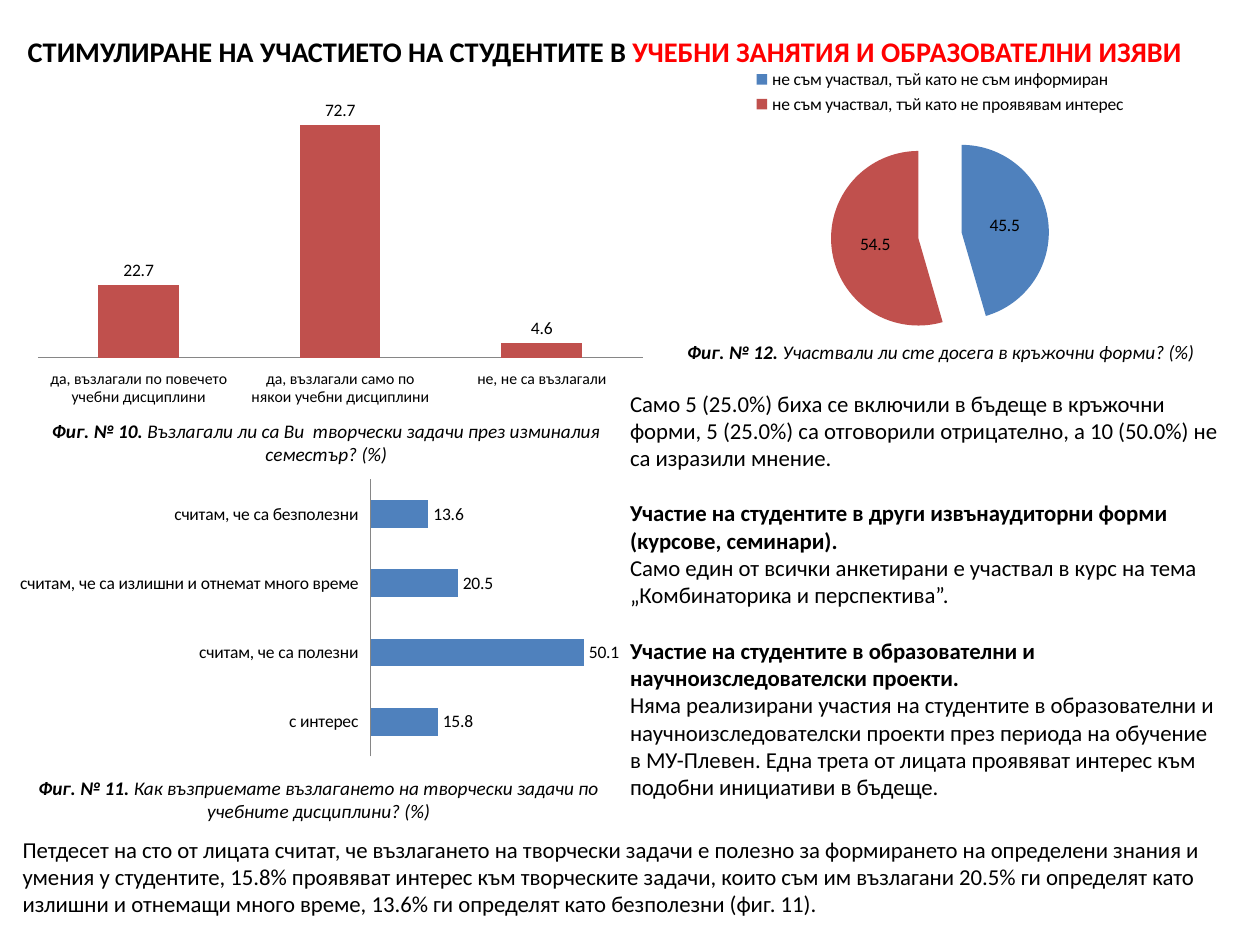
from lxml.etree import SubElement
from pptx import Presentation
from pptx.chart.data import CategoryChartData
from pptx.dml.color import RGBColor
from pptx.enum.chart import XL_CHART_TYPE, XL_LABEL_POSITION, XL_LEGEND_POSITION, XL_TICK_LABEL_POSITION, XL_TICK_MARK
from pptx.enum.text import MSO_ANCHOR, MSO_AUTO_SIZE, PP_ALIGN
from pptx.oxml import parse_xml
from pptx.oxml.ns import nsdecls, qn
from pptx.util import Pt

THEME = {
    "font": "Calibri", "black": "000000", "red": "FF0000", "axis": "868686",
    "blue": "4F81BD", "brick": "C0504D",
    "title": 16.2, "body": 13, "caption": 11, "label": 10, "small": 9, "gap": 15.9,
}

TITLE = {
    "box": (8.64, 9.36, 697.7, 39.6),
    "runs": [("СТИМУЛИРАНЕ НА УЧАСТИЕТО НА СТУДЕНТИТЕ В ", "black"),
             ("УЧЕБНИ ЗАНЯТИЯ И ОБРАЗОВАТЕЛНИ ИЗЯВИ", "red")],
}

BAR_CHARTS = [
    {"kind": XL_CHART_TYPE.COLUMN_CLUSTERED, "box": (14.4, 54.7, 360, 181.4),
     "color": "brick", "size": "small", "max": 80,
     "data": [("да, възлагали по повечето учебни дисциплини", 22.7),
              ("да, възлагали само по някои учебни дисциплини", 72.7),
              ("не, не са възлагали", 4.6)]},
    {"kind": XL_CHART_TYPE.BAR_CLUSTERED, "box": (4.3, 270.7, 360.7, 164.9),
     "color": "blue", "size": "label", "max": 60,
     "data": [("с интерес", 15.8),
              ("считам, че са полезни", 50.1),
              ("считам, че са излишни и отнемат много време", 20.5),
              ("считам, че са безполезни", 13.6)]},
]

PIE = {
    "kind": XL_CHART_TYPE.PIE, "box": (365.8, 31.7, 342.7, 175.7),
    "colors": ["blue", "brick"], "explosion": 25,
    "plot": {"x": 0, "y": 0.23, "w": 1, "h": 0.71},
    "data": [("не съм участвал, тъй като не съм информиран", 45.5),
             ("не съм участвал, тъй като не проявявам интерес", 54.5)],
}

CAPTIONS = [
    ((6.5, 236.2, 360, 33.8), "Фиг. № 10. ",
     "Възлагали ли са Ви  творчески задачи през изминалия семестър? (%)"),
    ((2.2, 439.9, 360, 33.8), "Фиг. № 11. ",
     "Как възприемате възлагането на творчески задачи по учебните дисциплини? (%)"),
    ((357.8, 190.8, 360, 20.9), "Фиг. № 12. ",
     "Участвали ли сте досега в кръжочни форми? (%)"),
]

FINDINGS_BOX = (352.8, 218.9, 352.8, 259.2)
FINDINGS = [
    (None, "Само 5 (25.0%) биха се включили в бъдеще в кръжочни форми, 5 (25.0%) са отговорили отрицателно, "
           "а 10 (50.0%) не са изразили мнение."),
    ("Участие на студентите в други извънаудиторни форми (курсове, семинари).",
     "Само един от всички анкетирани е участвал в курс на тема „Комбинаторика и перспектива”."),
    ("Участие на студентите в образователни и научноизследователски проекти.",
     "Няма реализирани участия на студентите в образователни и научноизследователски проекти през периода "
     "на обучение в МУ-Плевен. Една трета от лицата проявяват интерес към подобни инициативи в бъдеще."),
]

SUMMARY_BOX = (5.8, 473.8, 694.1, 54.7)
SUMMARY = ("Петдесет на сто от лицата считат, че възлагането на творчески задачи е полезно за формирането на "
           "определени знания и умения у студентите, 15.8% проявяват интерес към творческите задачи, които съм "
           "им възлагани 20.5% ги определят като излишни и отнемащи много време, 13.6% ги определят като "
           "безполезни (фиг. 11).")


def rgb(name):
    """Return a theme colour."""
    return RGBColor.from_string(THEME[name])


def set_all(obj, **values):
    """Set attributes from format values."""
    for name, value in values.items():
        setattr(obj, name, value)


def style_font(font, size, color="black", **values):
    """Apply the theme to a font."""
    set_all(font, name=THEME["font"], size=Pt(THEME[size]), **values)
    font.color.rgb = rgb(color)


def place(sp, box):
    """Move and size a shape."""
    set_all(sp, **dict(zip(("left", "top", "width", "height"), map(Pt, box))))


def add_run(p, text, size, color="black", **values):
    """Append a styled run."""
    r = p.add_run()
    r.text = text
    style_font(r.font, size, color, **values)


def add_text(slide, box):
    """Add a wrapping text box and return its first paragraph."""
    tf = slide.shapes.add_textbox(*map(Pt, box)).text_frame
    tf.word_wrap = True
    return tf.paragraphs[0]


def add_chart(slide, spec):
    """Add a labelled chart with one series."""
    data = CategoryChartData()
    data.categories = [name for name, _ in spec["data"]]
    data.add_series("Series 1", [value for _, value in spec["data"]])
    chart = slide.shapes.add_chart(spec["kind"], *map(Pt, spec["box"]), data).chart
    set_all(chart, has_title=False, has_legend=False)
    style_font(chart.font, "label")
    plot = chart.plots[0]
    plot.has_data_labels = True
    set_all(plot.data_labels, show_value=True, show_percentage=False,
            number_format="0.0", number_format_is_linked=False)
    style_font(plot.data_labels.font, "label")
    return chart, plot


def add_bars(slide, spec):
    """Add a bar or column chart."""
    chart, plot = add_chart(slide, spec)
    set_all(plot, gap_width=150, overlap=-25, vary_by_categories=False)
    plot.data_labels.position = XL_LABEL_POSITION.OUTSIDE_END
    fill = plot.series[0].format.fill
    fill.solid()
    fill.fore_color.rgb = rgb(spec["color"])
    set_all(chart.value_axis, visible=False, has_major_gridlines=False,
            minimum_scale=0, maximum_scale=spec["max"])
    axis = chart.category_axis
    set_all(axis, major_tick_mark=XL_TICK_MARK.NONE, has_major_gridlines=False,
            tick_label_position=XL_TICK_LABEL_POSITION.LOW)
    style_font(axis.tick_labels.font, spec["size"])
    axis.format.line.color.rgb = rgb("axis")
    axis.format.line.width = Pt(0.75)


def add_pie(slide, spec):
    """Add the exploded pie with its legend on top."""
    chart, plot = add_chart(slide, spec)
    plot.vary_by_categories = True
    plot.data_labels.position = XL_LABEL_POSITION.CENTER
    series = plot.series[0]
    explosion = parse_xml(f'<c:explosion {nsdecls("c")} val="{spec["explosion"]}"/>')
    series._element.find(qn("c:tx")).addnext(explosion)
    for i, color in enumerate(spec["colors"]):
        fill = series.points[i].format.fill
        fill.solid()
        fill.fore_color.rgb = rgb(color)
    chart.has_legend = True
    set_all(chart.legend, position=XL_LEGEND_POSITION.TOP, include_in_layout=False)
    style_font(chart.legend.font, "label")
    area = chart._chartSpace.chart.plotArea
    for old in area.findall(qn("c:layout")):
        area.remove(old)
    layout = parse_xml(f'<c:layout {nsdecls("c")}><c:manualLayout/></c:layout>')
    values = {"layoutTarget": "inner", "xMode": "edge", "yMode": "edge", **spec["plot"]}
    for tag, value in values.items():
        SubElement(layout[0], qn(f"c:{tag}")).set("val", str(value))
    area.insert(0, layout)


def add_finding(tf, text, bold, gap):
    """Add one unbulleted paragraph to the body."""
    p = tf.paragraphs[0] if not tf.text else tf.add_paragraph()
    pPr = p._p.get_or_add_pPr()
    pPr.set("marL", "0")
    pPr.set("indent", "0")
    set_all(p, space_before=Pt(gap), alignment=PP_ALIGN.LEFT)
    pPr.append(parse_xml(f'<a:buNone {nsdecls("a")}/>'))
    add_run(p, text, "body", bold=bold)


def main():
    """Build the slide."""
    prs = Presentation()
    set_all(prs, slide_width=Pt(720), slide_height=Pt(540))
    s = prs.slides.add_slide(prs.slide_layouts[1])
    title, body = s.shapes.title, s.placeholders[1]
    place(title, TITLE["box"])
    set_all(title.text_frame, vertical_anchor=MSO_ANCHOR.MIDDLE, auto_size=MSO_AUTO_SIZE.NONE)
    p = title.text_frame.paragraphs[0]
    p.alignment = PP_ALIGN.LEFT
    for text, color in TITLE["runs"]:
        add_run(p, text, "title", color, bold=True)
    for spec in BAR_CHARTS:
        add_bars(s, spec)
    add_pie(s, PIE)
    for box, label, text in CAPTIONS:
        p = add_text(s, box)
        p.alignment = PP_ALIGN.CENTER
        add_run(p, label, "caption", bold=True, italic=True)
        add_run(p, text, "caption", bold=False, italic=True)
    place(body, FINDINGS_BOX)
    body.text_frame.auto_size = MSO_AUTO_SIZE.NONE
    for heading, text in FINDINGS:
        if heading:
            add_finding(body.text_frame, heading, True, THEME["gap"])
        add_finding(body.text_frame, text, False, 0)
    add_run(add_text(s, SUMMARY_BOX), SUMMARY, "body")
    prs.save("out.pptx")


if __name__ == "__main__":
    main()
